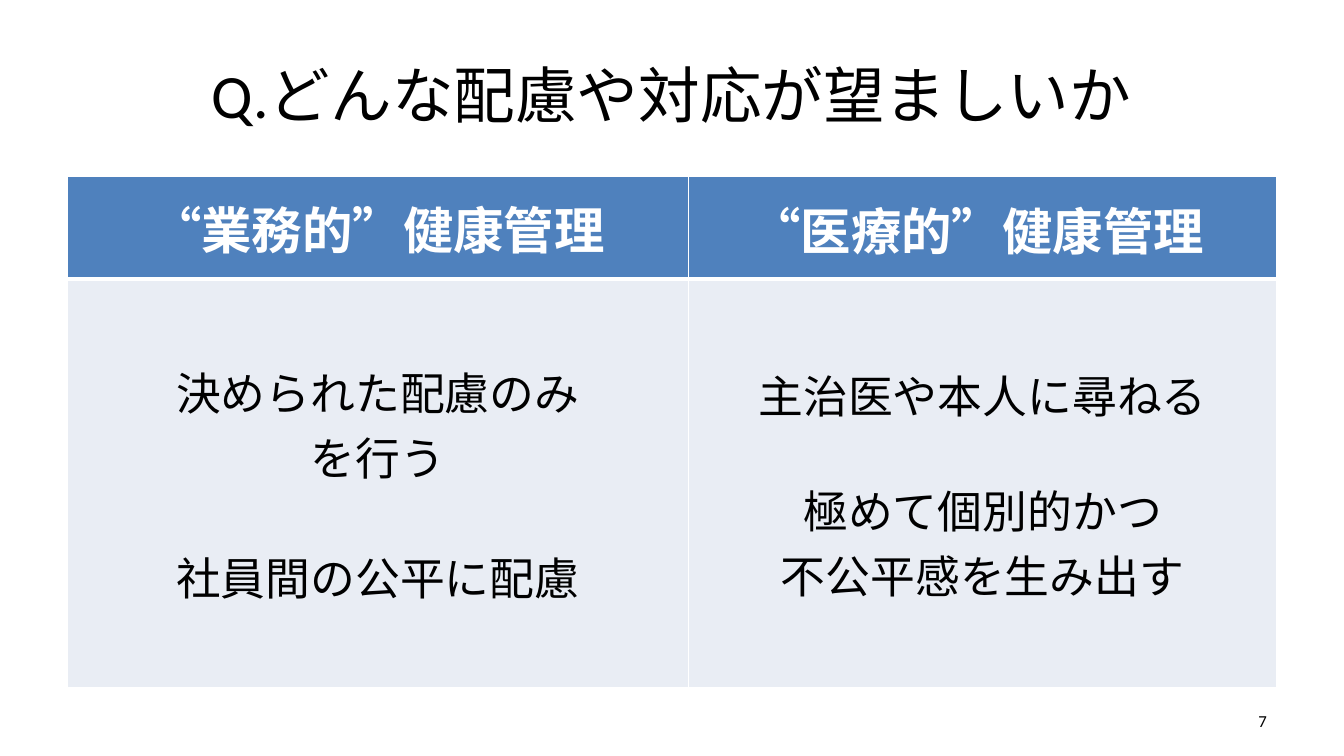
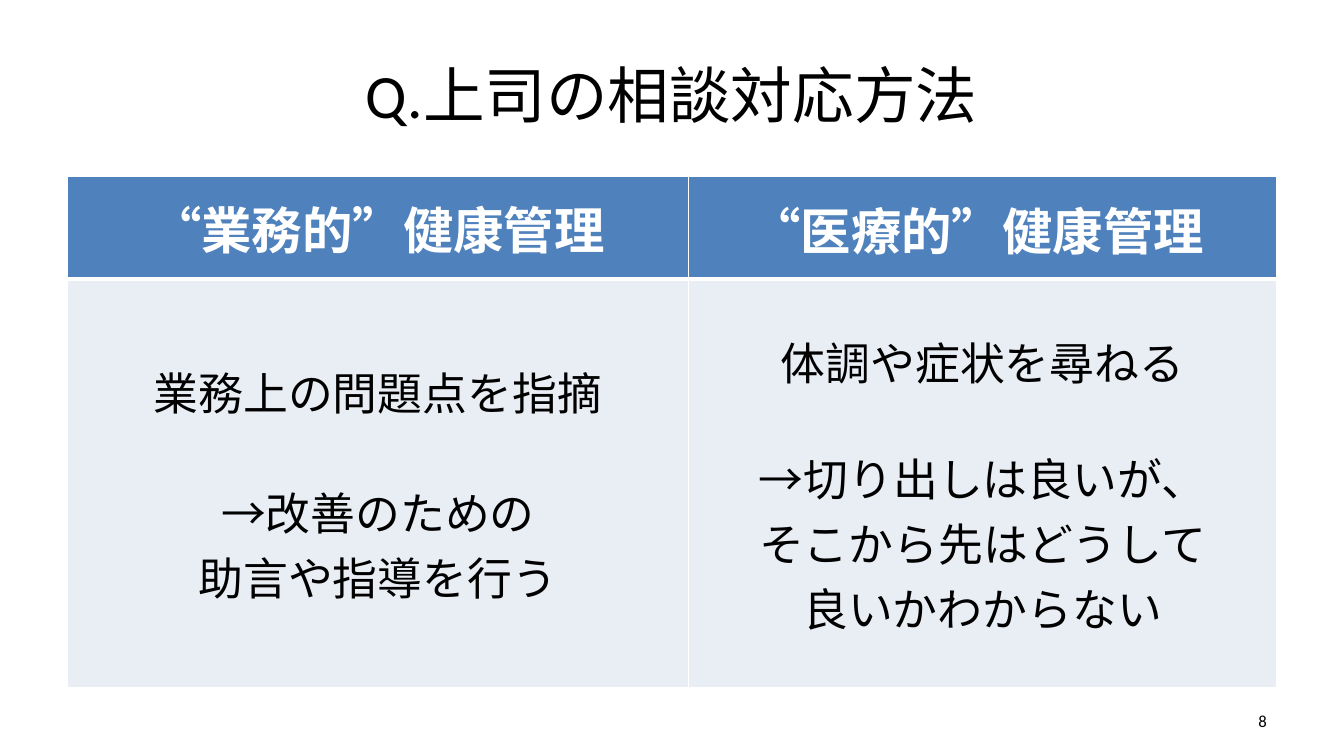
import dataclasses
import itertools
import typing

import lxml.etree
import pptx
import pptx.dml.color
import pptx.enum.text
import pptx.oxml.ns
import pptx.util

PX = 9525
WIDE, HIGH = 1280, 720
LEFT, SPAN = 64, 1152
COLS = (592, 560)
ROWS = (98, 389)

BLACK, WHITE = "000000", "FFFFFF"
BLUE, PALE = "4F81BD", "E9EDF4"

ALIGN = pptx.enum.text.PP_ALIGN
MIDDLE = pptx.enum.text.MSO_ANCHOR.MIDDLE
HEADS = ("“業務的”健康管理", "“医療的”健康管理 ")


@dataclasses.dataclass(frozen=True)
class Style:
    size: int
    color: str = BLACK
    name: str = "Calibri"
    bold: bool = False
    align: typing.Any = ALIGN.CENTER
    gap: int = 0


@dataclasses.dataclass(frozen=True)
class Page:
    """Each cell holds blocks of lines; a gap parts the blocks."""
    number: int
    title: str
    cells: tuple


TITLE = Style(44)
HEAD = Style(36, WHITE, bold=True)
BODY = (Style(32, gap=39), Style(32, name="Arial", gap=36))
FOOT = Style(12, align=ALIGN.RIGHT)
TIGHT = dict(margin_left=PX, margin_top=PX, margin_right=PX, margin_bottom=0)

PAGES = (
    Page(7, "Q.どんな配慮や対応が望ましいか", (
        (("決められた配慮のみ", "を行う"), ("社員間の公平に配慮",)),
        (("主治医や本人に尋ねる",), ("極めて個別的かつ", "不公平感を生み出す")),
    )),
    Page(8, "Q.上司の相談対応方法", (
        (("業務上の問題点を指摘",), ("→改善のための", "助言や指導を行う")),
        (("体調や症状を尋ねる",),
         ("→切り出しは良いが、", "そこから先はどうして", "良いかわからない")),
    )),
)


def rgb(code: str) -> pptx.dml.color.RGBColor:
    return pptx.dml.color.RGBColor.from_string(code)


def apply(target: typing.Any, values: dict) -> None:
    for key, value in values.items():
        setattr(target, key, value)


def box(left: int, top: int, width: int, height: int) -> dict:
    sides = zip(("left", "top", "width", "height"), (left, top, width, height))
    return {key: value * PX for key, value in sides}


def write(frame: typing.Any, blocks: tuple, style: Style) -> None:
    frame.word_wrap = True
    first = True
    for block, lines in enumerate(blocks):
        for row, line in enumerate(lines):
            para = frame.paragraphs[0] if first else frame.add_paragraph()
            first = False
            para.alignment = style.align
            if block and not row:
                para.space_before = pptx.util.Pt(style.gap)
            run = para.add_run()
            run.text = line
            apply(run.font, dict(size=pptx.util.Pt(style.size),
                                 name=style.name, bold=style.bold))
            run.font.color.rgb = rgb(style.color)


def border(cell: typing.Any, widths: dict) -> None:
    """Give the cell white edges, with widths in points."""
    qn = pptx.oxml.ns.qn
    props = cell._tc.get_or_add_tcPr()
    for side, width in widths.items():
        line = lxml.etree.SubElement(props, qn(f"a:ln{side}"),
                                     w=str(pptx.util.Pt(width)))
        fill = lxml.etree.SubElement(line, qn("a:solidFill"))
        lxml.etree.SubElement(fill, qn("a:srgbClr"), val=WHITE)


def add_grid(slide: typing.Any, cells: tuple) -> None:
    place = box(LEFT, 168, SPAN, sum(ROWS))
    table = slide.shapes.add_table(len(ROWS), len(COLS), **place).table
    table.horz_banding = False
    for col, width in zip(table.columns, COLS):
        col.width = width * PX
    for row, height in zip(table.rows, ROWS):
        row.height = height * PX
    for row, col in itertools.product(range(len(ROWS)), range(len(COLS))):
        cell = table.cell(row, col)
        top, low = (3, 1) if row else (1, 3)
        border(cell, dict(L=1, R=1, T=top, B=low))
        cell.fill.solid()
        cell.fill.fore_color.rgb = rgb(PALE if row else BLUE)
        cell.vertical_anchor = MIDDLE
        if col:
            apply(cell, TIGHT)
        blocks = cells[col] if row else ((HEADS[col],),)
        write(cell.text_frame, blocks, BODY[col] if row else HEAD)


def add_page(deck: typing.Any, page: Page) -> None:
    slide = deck.slides.add_slide(deck.slide_layouts.get_by_name("Title Only"))
    title = slide.shapes.title
    apply(title, box(LEFT, 29, SPAN, 120))
    foot = slide.shapes.add_textbox(**box(918, 667, 298, 38))
    texts = ((title, page.title, TITLE), (foot, str(page.number), FOOT))
    for shape, text, style in texts:
        shape.text_frame.vertical_anchor = MIDDLE
        write(shape.text_frame, ((text,),), style)
    add_grid(slide, page.cells)


def main() -> None:
    deck = pptx.Presentation()
    apply(deck, dict(slide_width=WIDE * PX, slide_height=HIGH * PX))
    for page in PAGES:
        add_page(deck, page)
    deck.save("out.pptx")


if __name__ == "__main__":
    main()
